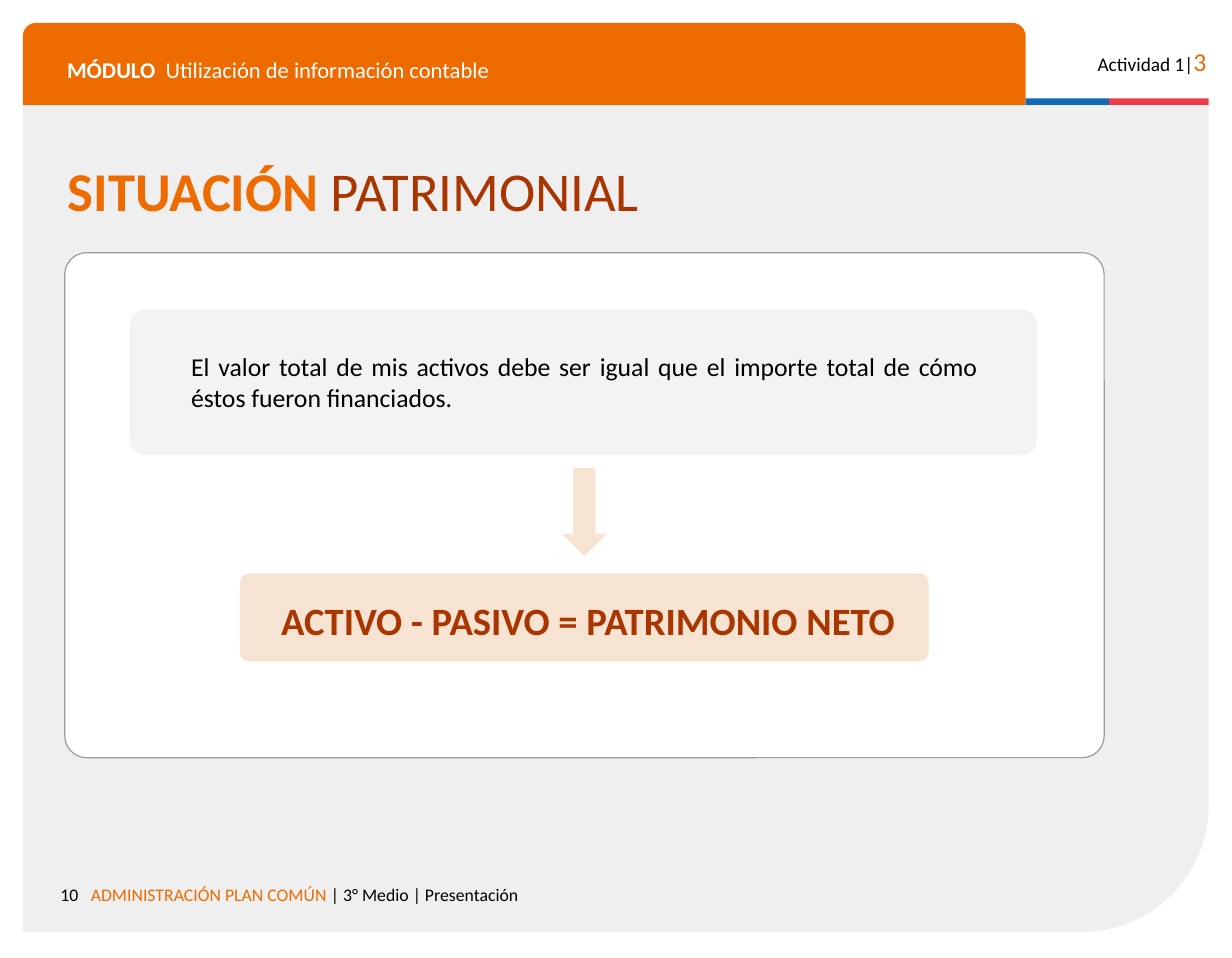
from lxml.etree import SubElement
from pptx import Presentation
from pptx.dml.color import RGBColor
from pptx.enum.shapes import MSO_SHAPE as SHAPE
from pptx.enum.text import MSO_ANCHOR as ANCHOR, PP_ALIGN as ALIGN
from pptx.oxml.ns import qn
from pptx.util import Cm, Pt

ORANGE = RGBColor(0xED, 0x6B, 0x00)
RUST = RGBColor(0xA9, 0x35, 0x01)
PEACH = RGBColor(0xF7, 0xE3, 0xD1)
BLUE = RGBColor(0x0F, 0x69, 0xB4)
RED = RGBColor(0xEB, 0x3C, 0x46)
PAGE_GREY = RGBColor(0xEF, 0xEF, 0xEF)
BOX_GREY = RGBColor(0xF3, 0xF3, 0xF3)
LINE_GREY = RGBColor(0x9B, 0x9B, 0x9B)
WHITE = RGBColor(0xFF, 0xFF, 0xFF)
BLACK = RGBColor(0, 0, 0)


class SlideBuilder:
    font = "Calibri"
    inset = Cm(0.25)

    def __init__(self, slide):
        self.shapes = slide.shapes

    def shape(self, kind, box, fill, adj=(), line=None):
        sp = self.shapes.add_shape(kind, *map(Cm, box))
        sp.shadow.inherit = False
        for i, value in enumerate(adj):
            sp.adjustments[i] = value
        sp.fill.solid()
        sp.fill.fore_color.rgb = fill
        if line is None:
            sp.line.fill.background()
        else:
            sp.line.color.rgb = line
            sp.line.width = Pt(0.75)
        return sp

    def text(self, box, *runs, align=ALIGN.LEFT, anchor=ANCHOR.TOP, spacing=None):
        """Add one paragraph; each run is (text, size, colour, bold)."""
        tf = self.shapes.add_textbox(*map(Cm, box)).text_frame
        tf.word_wrap = True
        tf.vertical_anchor = anchor
        tf.margin_left = tf.margin_right = self.inset
        tf.margin_top = tf.margin_bottom = self.inset
        p = tf.paragraphs[0]
        p.alignment = align
        p.line_spacing = spacing
        for text, size, colour, bold in runs:
            r = p.add_run()
            r.text = text
            r.font.name = self.font
            r.font.size = Pt(size)
            r.font.bold = bold
            r.font.color.rgb = colour
        return p


def add_tab_stop(p, position):
    tabs = SubElement(p._p.get_or_add_pPr(), qn("a:tabLst"))
    SubElement(tabs, qn("a:tab"), pos=str(position), algn="l")


def add_frame(b):
    page = b.shape(SHAPE.ROUND_1_RECTANGLE, (0.5, 2.29, 25.99, 18.14),
                   PAGE_GREY, [0.153])
    page._element.spPr.xfrm.set("flipV", "1")
    b.shape(SHAPE.ROUND_2_SAME_RECTANGLE, (0.5, 0.5, 21.98, 1.8),
            ORANGE, [0.167, 0])
    b.shape(SHAPE.RECTANGLE, (22.48, 2.16, 1.83, 0.14), BLUE)
    b.shape(SHAPE.RECTANGLE, (24.31, 2.16, 2.18, 0.14), RED)

    b.text((0.5, 19.13, 1.47, 0.74), ("10", 11, BLACK, False), align=ALIGN.RIGHT)
    b.text((1.74, 19.13, 18.15, 0.97),
           ("ADMINISTRACIÓN PLAN COMÚN ", 11, ORANGE, False),
           ("| 3° Medio | Presentación", 11, BLACK, False))
    module = b.text((1.22, 0.97, 20.68, 0.89),
                    ("MÓDULO", 14, WHITE, True),
                    ("\tUtilización de información contable", 14, WHITE, False))
    add_tab_stop(module, Cm(2.16))
    b.text((23.44, 0.76, 3.25, 0.97),
           ("Actividad 1|", 12, BLACK, False), ("3", 16, ORANGE, False),
           align=ALIGN.RIGHT)


def add_content(b):
    b.shape(SHAPE.ROUNDED_RECTANGLE, (1.42, 5.54, 22.78, 11.07),
            WHITE, [0.043], LINE_GREY)
    b.text((1.24, 3.84, 24.87, 0.89),
           ("SITUACIÓN ", 34, ORANGE, True), ("PATRIMONIAL", 34, RUST, False),
           anchor=ANCHOR.MIDDLE, spacing=0.8)

    b.shape(SHAPE.ROUNDED_RECTANGLE, (5.26, 12.57, 15.09, 1.93), PEACH, [0.102])
    b.text((5.78, 12.83, 14.22, 1.19),
           ("ACTIVO - PASIVO = PATRIMONIO NETO", 24, RUST, True),
           align=ALIGN.CENTER)

    b.shape(SHAPE.ROUNDED_RECTANGLE, (2.84, 6.78, 19.89, 3.2), BOX_GREY, [0.109])
    b.text((3.94, 7.42, 17.75, 1.88),
           ("El valor total de mis activos debe ser igual que el importe total "
            "de cómo éstos fueron financiados.", 16, BLACK, False),
           align=ALIGN.JUSTIFY, anchor=ANCHOR.MIDDLE)
    b.shape(SHAPE.DOWN_ARROW, (12.32, 10.26, 0.97, 1.93), PEACH, [0.5, 0.5])


def main():
    prs = Presentation()
    prs.slide_width, prs.slide_height = Cm(27), Cm(21)
    builder = SlideBuilder(prs.slides.add_slide(prs.slide_layouts[6]))
    add_frame(builder)
    add_content(builder)
    prs.save("out.pptx")


if __name__ == "__main__":
    main()
